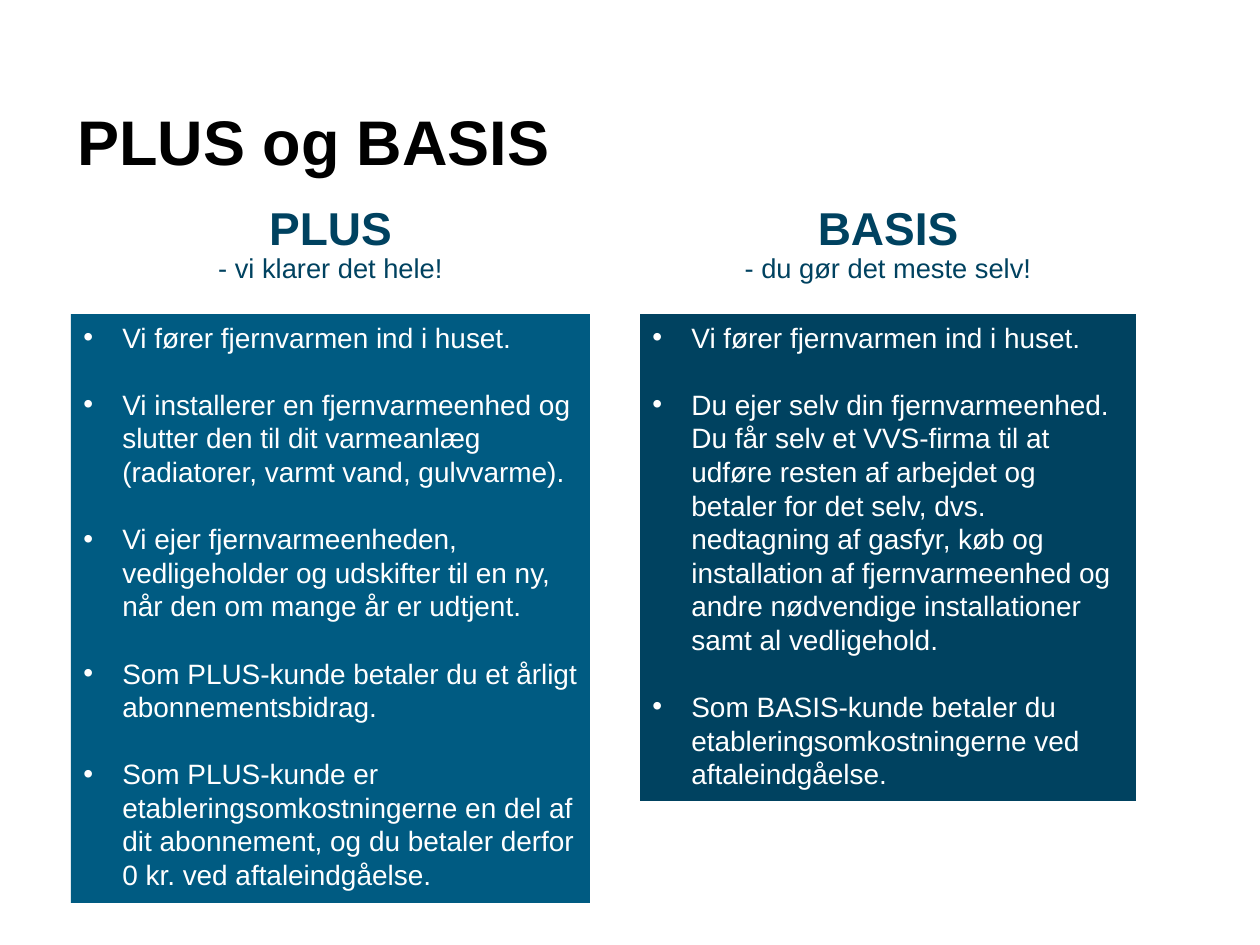
from lxml.etree import SubElement
from pptx import Presentation
from pptx.dml.color import RGBColor
from pptx.enum.shapes import MSO_SHAPE
from pptx.enum.text import MSO_ANCHOR, PP_ALIGN
from pptx.oxml.ns import qn
from pptx.util import Inches, Pt

PX = Inches(1) / 126
BLACK = RGBColor(0x00, 0x00, 0x00)
WHITE = RGBColor(0xFF, 0xFF, 0xFF)
BLUE = RGBColor(0x00, 0x5B, 0x82)
NAVY = RGBColor(0x00, 0x42, 0x60)

FONT = "Arial"
HEADING_TOP, HEADING_HEIGHT = 195, 100
LIST_TOP = 314
INDENT = 39

COLUMNS = [
    (71, 519, 589, BLUE, "PLUS", "- vi klarer det hele!", [
        "Vi fører fjernvarmen ind i huset.",
        "Vi installerer en fjernvarmeenhed og slutter den til dit varmeanlæg "
        "(radiatorer, varmt vand, gulvvarme).",
        "Vi ejer fjernvarmeenheden, vedligeholder og udskifter til en ny, "
        "når den om mange år er udtjent.",
        "Som PLUS-kunde betaler du et årligt abonnementsbidrag.",
        "Som PLUS-kunde er etableringsomkostningerne en del af dit abonnement, "
        "og du betaler derfor 0 kr. ved aftaleindgåelse.",
    ]),
    (640, 496, 487, NAVY, "BASIS", "- du gør det meste selv!", [
        "Vi fører fjernvarmen ind i huset.",
        "Du ejer selv din fjernvarmeenhed. Du får selv et VVS-firma til at udføre "
        "resten af arbejdet og betaler for det selv, dvs. nedtagning af gasfyr, "
        "køb og installation af fjernvarmeenhed og andre nødvendige "
        "installationer samt al vedligehold.",
        "Som BASIS-kunde betaler du etableringsomkostningerne ved aftaleindgåelse.",
    ]),
]


def add_box(left, top, width, height, fill, anchor):
    box = page.shapes.add_shape(
        MSO_SHAPE.RECTANGLE, *(round(n * PX) for n in (left, top, width, height)))
    box.shadow.inherit = False
    box.fill.solid()
    box.fill.fore_color.rgb = fill
    box.line.fill.background()
    box.text_frame.word_wrap = True
    box.text_frame.vertical_anchor = anchor
    return box.text_frame


def add_text(frame, text, size, color, bold, align, spacing):
    para = frame.paragraphs[0]
    if para.runs:
        para = frame.add_paragraph()
    para.alignment = align
    para.line_spacing = spacing
    span = para.add_run()
    span.text = text
    span.font.name = FONT
    span.font.size = Pt(size)
    span.font.bold = bold
    span.font.color.rgb = color
    return para


deck = Presentation()
deck.slide_width, deck.slide_height = Inches(10), Inches(7.5)
page = deck.slides.add_slide(deck.slide_layouts[6])

title = page.shapes.add_textbox(*(round(n * PX) for n in (65, 95, 1133, 100))).text_frame
title.word_wrap = True
title.vertical_anchor = MSO_ANCHOR.MIDDLE
add_text(title, "PLUS og BASIS", 36, BLACK, True, PP_ALIGN.LEFT, 0.9)

for left, width, height, fill, name, tagline, points in COLUMNS:
    bullets = add_box(left, LIST_TOP, width, height, fill, MSO_ANCHOR.TOP)
    for number, point in enumerate(points):
        para = add_text(bullets, point, 16, WHITE, False, PP_ALIGN.LEFT, 1.0)
        if number:
            para.space_before = Pt(19.2)
        properties = para._p.get_or_add_pPr()
        properties.set("marL", str(round(INDENT * PX)))
        properties.set("indent", str(round(-INDENT * PX)))
        SubElement(properties, qn("a:buFont"), typeface=FONT)
        SubElement(properties, qn("a:buChar"), char="•")

    heading = add_box(left, HEADING_TOP, width, HEADING_HEIGHT, WHITE, MSO_ANCHOR.MIDDLE)
    add_text(heading, name, 26.3, NAVY, True, PP_ALIGN.CENTER, 0.9)
    add_text(heading, tagline, 15.6, NAVY, False, PP_ALIGN.CENTER, 0.9)

deck.save("out.pptx")
